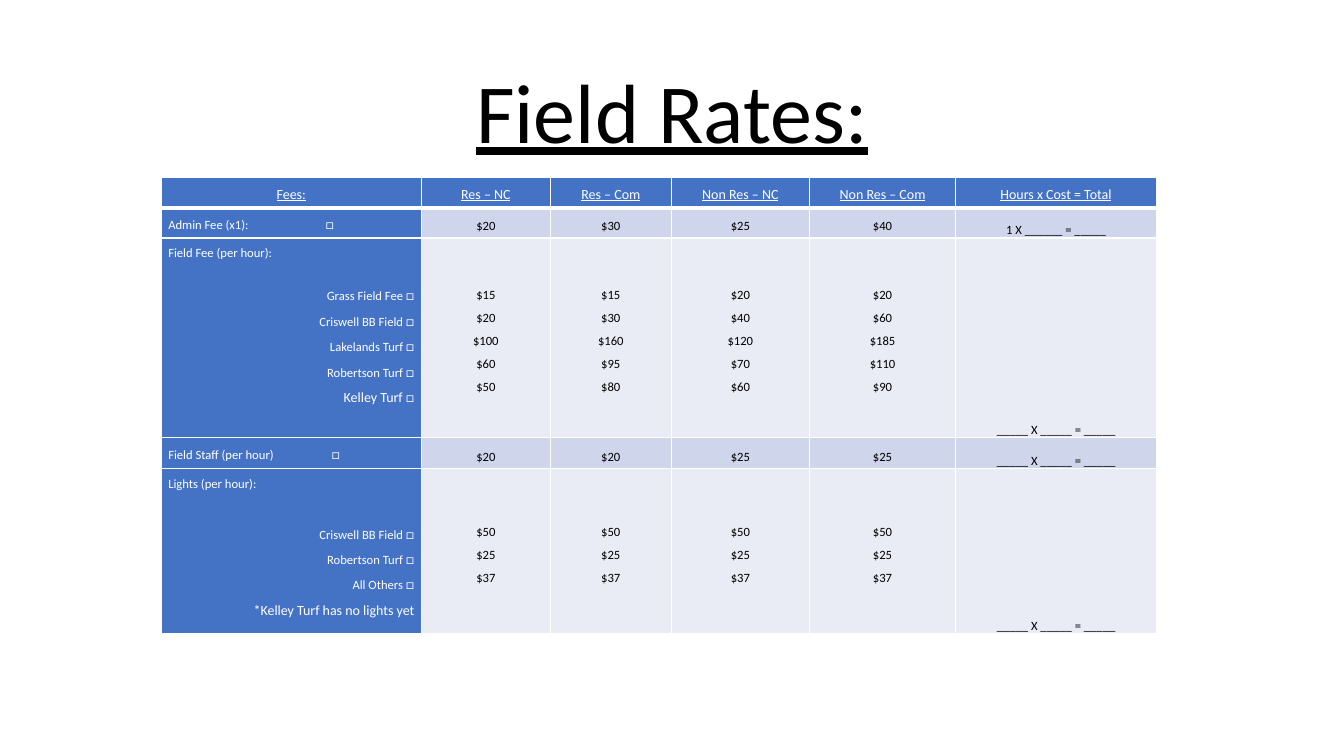
import dataclasses
import typing

import lxml.etree
import pptx
import pptx.dml.color
import pptx.enum.text
import pptx.oxml.ns
import pptx.util

WIDTH, HEIGHT = pptx.util.Inches(13.33), pptx.util.Inches(7.5)
COLOURS = {"ink": "000000", "paper": "FFFFFF", "blue": "4472C4",
           "dark band": "CFD5EA", "light band": "E9EBF5"}
ALIGN = pptx.enum.text.PP_ALIGN
ANCHOR = pptx.enum.text.MSO_ANCHOR
CHECKBOX = "□"
TOTAL = "_____ X _____ = _____"

# Percent of the slide's width and height
TITLE_AREA = (12.5, 5.73, 75, 16.27)
TABLE_CORNER = (12, 23.47)
COLUMN_SHARES = (19.35, 9.6, 9, 10.28, 10.88, 14.93)

TITLE_FORMAT = {"size": pptx.util.Pt(60), "name": "Calibri",
                "underline": True, "bold": False}
HEADER_FORMAT = {"size": pptx.util.Pt(10), "name": "Calibri",
                 "underline": True, "bold": False}
BODY_FORMAT = {"size": pptx.util.Pt(9), "name": "Calibri",
               "underline": False, "bold": False}
CELL_FORMAT = {"margin_left": pptx.util.Inches(0.07),
               "margin_right": pptx.util.Inches(0.07),
               "margin_top": 0, "margin_bottom": 0}


@dataclasses.dataclass(frozen=True)
class Line:
    text: str
    size: float = 9
    align: ALIGN = ALIGN.CENTER
    before: float = 0
    tab: float = 0


@dataclasses.dataclass(frozen=True)
class FeeRow:
    share: float
    band: str
    labels: list[Line]
    prices: list[str]
    total: str = TOTAL


def option(text: str, size: float = 9, before: float = 0) -> Line:
    return Line(text, size, ALIGN.RIGHT, before)


HEADER_SHARE = 4
HEADERS = ["Fees:", "Res – NC", "Res – Com", "Non Res – NC", "Non Res – Com",
           "Hours x Cost = Total"]
# Each price string lists one column's values from top to bottom
FEE_ROWS = [
    FeeRow(4, "dark band", [Line("Admin Fee (x1):\t□", align=ALIGN.LEFT, tab=1.56)],
           ["$20", "$30", "$25", "$40"], "1 X ______ = _____"),
    FeeRow(26.4, "light band",
           [Line("Field Fee (per hour):", align=ALIGN.LEFT),
            option("Grass Field Fee □", before=12.8),
            option("Criswell BB Field □"),
            option("Lakelands Turf □"),
            option("Robertson Turf □"),
            option("Kelley Turf □", 10)],
           ["$15 $20 $100 $60 $50", "$15 $30 $160 $95 $80",
            "$20 $40 $120 $70 $60", "$20 $60 $185 $110 $90"]),
    FeeRow(4.13, "dark band",
           [Line("Field Staff (per hour)\t□", align=ALIGN.LEFT, tab=1.62)],
           ["$20", "$20", "$25", "$25"]),
    FeeRow(21.87, "light band",
           [Line("Lights (per hour):", align=ALIGN.LEFT),
            option("Criswell BB Field □", before=18.3),
            option("Robertson Turf □"),
            option("All Others □"),
            option("*Kelley Turf has no lights yet", 10)],
           ["$50 $25 $37"] * 4),
]


def across(percent: float) -> int:
    return round(WIDTH * percent / 100)


def down(percent: float) -> int:
    return round(HEIGHT * percent / 100)


def apply(target: typing.Any, values: dict[str, typing.Any]) -> None:
    for name, value in values.items():
        setattr(target, name, value)


def rgb(colour: str) -> pptx.dml.color.RGBColor:
    return pptx.dml.color.RGBColor.from_string(COLOURS[colour])


def add_span(para: typing.Any, text: str, values: dict, colour: str) -> None:
    span = para.add_run()
    span.text = text
    apply(span.font, values)
    span.font.color.rgb = rgb(colour)


def add_tab_stop(para: typing.Any, inches: float) -> None:
    qn = pptx.oxml.ns.qn
    stops = lxml.etree.SubElement(para._p.get_or_add_pPr(), qn("a:tabLst"))
    lxml.etree.SubElement(stops, qn("a:tab"), pos=str(pptx.util.Inches(inches)), algn="l")


def set_borders(cell: typing.Any, bottom: float) -> None:
    qn = pptx.oxml.ns.qn
    properties = cell._tc.get_or_add_tcPr()
    for index, (side, width) in enumerate(zip("LRTB", (1, 1, 1, bottom))):
        edge = lxml.etree.Element(qn(f"a:ln{side}"), w=str(pptx.util.Pt(width)))
        fill = lxml.etree.SubElement(edge, qn("a:solidFill"))
        lxml.etree.SubElement(fill, qn("a:srgbClr"), val=COLOURS["paper"])
        properties.insert(index, edge)


def fill_cell(cell: typing.Any, lines: list[Line], values: dict, colour: str,
              fill: str, anchor: ANCHOR = ANCHOR.TOP, bottom: float = 1) -> None:
    apply(cell, CELL_FORMAT | {"vertical_anchor": anchor})
    cell.fill.solid()
    cell.fill.fore_color.rgb = rgb(fill)
    set_borders(cell, bottom)
    for index, line in enumerate(lines):
        para = cell.text_frame.paragraphs[0] if index == 0 else cell.text_frame.add_paragraph()
        apply(para, {"alignment": line.align, "line_spacing": 1.5,
                     "space_before": pptx.util.Pt(line.before)})
        if line.tab:
            add_tab_stop(para, line.tab)
        label, mark, _ = line.text.partition(CHECKBOX)
        add_span(para, label, values | {"size": pptx.util.Pt(line.size)}, colour)
        if mark:
            add_span(para, mark, values | {"size": pptx.util.Pt(10)}, colour)


def add_title(page: typing.Any) -> None:
    box = page.shapes.title
    left, top, width, height = TITLE_AREA
    apply(box, {"left": across(left), "top": down(top),
                "width": across(width), "height": down(height)})
    apply(box.text_frame, {"vertical_anchor": ANCHOR.BOTTOM, "word_wrap": True,
                           "auto_size": pptx.enum.text.MSO_AUTO_SIZE.NONE})
    para = box.text_frame.paragraphs[0]
    apply(para, {"alignment": ALIGN.CENTER, "line_spacing": 0.9})
    add_span(para, "Field Rates:", TITLE_FORMAT, "ink")


def add_rates(page: typing.Any) -> None:
    row_shares = [HEADER_SHARE] + [row.share for row in FEE_ROWS]
    table = page.shapes.add_table(
        len(row_shares), len(HEADERS), across(TABLE_CORNER[0]), down(TABLE_CORNER[1]),
        across(sum(COLUMN_SHARES)), down(sum(row_shares))).table
    apply(table, {"first_row": False, "horz_banding": False})
    for column, share in zip(table.columns, COLUMN_SHARES):
        column.width = across(share)
    for row, share in zip(table.rows, row_shares):
        row.height = down(share)

    # Header row
    for column, text in enumerate(HEADERS):
        fill_cell(table.cell(0, column), [Line(text, 10)], HEADER_FORMAT,
                  "paper", "blue", bottom=3)

    # Fee rows: labels, prices, total
    for index, fee in enumerate(FEE_ROWS, start=1):
        fill_cell(table.cell(index, 0), fee.labels, BODY_FORMAT, "paper", "blue")
        for column, prices in enumerate(fee.prices, start=1):
            fill_cell(table.cell(index, column), [Line(price) for price in prices.split()],
                      BODY_FORMAT, "ink", fee.band, ANCHOR.MIDDLE)
        fill_cell(table.cell(index, len(HEADERS) - 1), [Line(fee.total)],
                  BODY_FORMAT, "ink", fee.band, ANCHOR.BOTTOM)


def main() -> None:
    deck = pptx.Presentation()
    apply(deck, {"slide_width": WIDTH, "slide_height": HEIGHT})
    page = deck.slides.add_slide(deck.slide_layouts.get_by_name("Title Only"))
    add_title(page)
    add_rates(page)
    deck.save("out.pptx")


if __name__ == "__main__":
    main()
